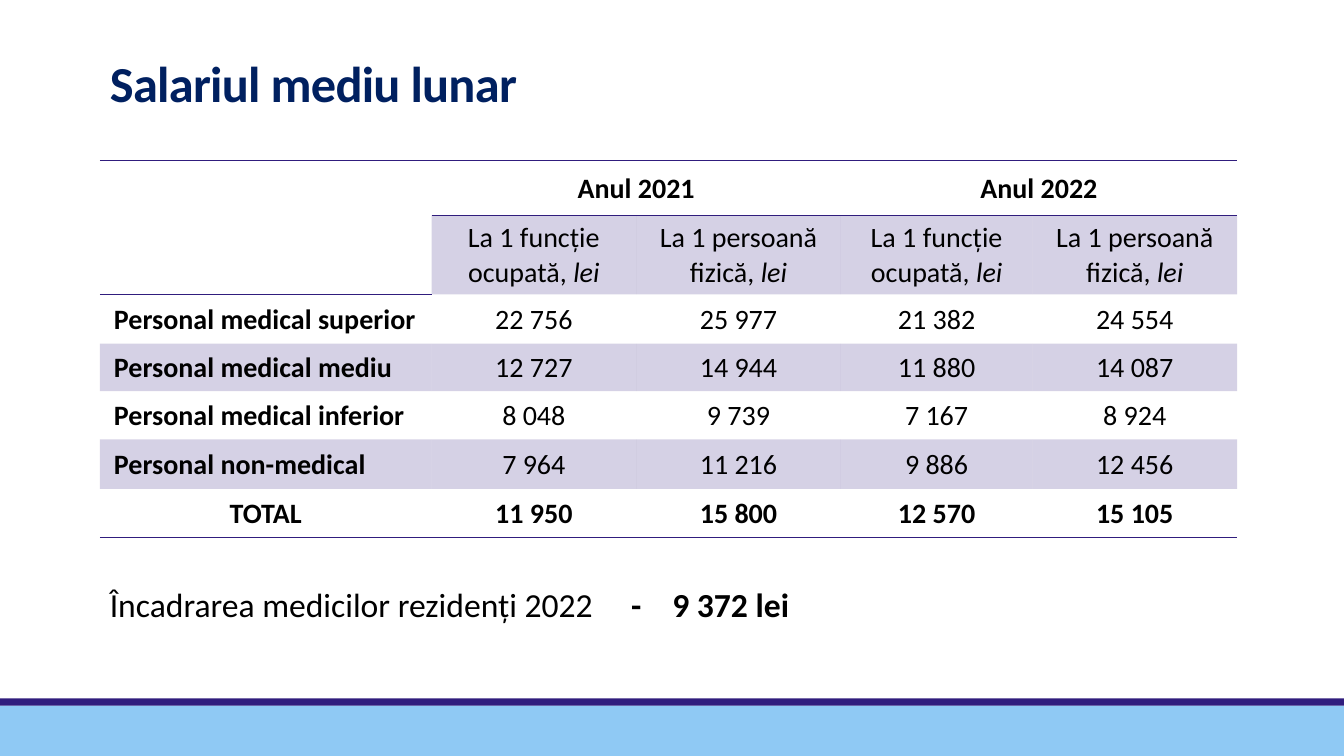
from lxml import etree
from pptx import Presentation
from pptx.dml.color import RGBColor
from pptx.enum import shapes, text
from pptx.oxml.ns import qn
from pptx.util import Inches, Pt

NAVY = RGBColor(0x00, 0x20, 0x60)
PURPLE = RGBColor(0x30, 0x1D, 0x7D)
SKY = RGBColor(0x8F, 0xC9, 0xF4)
BLACK = RGBColor(0, 0, 0)
PLAIN = "{2D5ABB26-0587-4C30-8999-92F81FD0307C}"


def style(run, size, color=BLACK, bold=False, italic=False):
    font = run.font
    font.name, font.size, font.bold, font.italic = "Calibri", Pt(size), bold, italic
    font.color.rgb = color


def rule(cell, *sides):
    props = cell._tc.get_or_add_tcPr()
    for side in sides:
        line = etree.SubElement(props, qn("a:ln" + side), w=str(Pt(1)))
        fill = etree.SubElement(line, qn("a:solidFill"))
        etree.SubElement(fill, qn("a:srgbClr"), val=str(PURPLE))


deck = Presentation()
deck.slide_width, deck.slide_height = Inches(13.33), Inches(7.5)
slide = deck.slides.add_slide(deck.slide_layouts[5])

# Bottom bands
for top, height, color in [(7, 0.5, SKY), (6.93, 0.07, PURPLE)]:
    band = slide.shapes.add_shape(
        shapes.MSO_SHAPE.RECTANGLE, 0, Inches(top), deck.slide_width, Inches(height))
    band.shadow.inherit = False
    band.fill.solid()
    band.fill.fore_color.rgb = color
    band.line.fill.background()

# Title
title = slide.shapes.title
title.left, title.top = Inches(0.99), Inches(0.29)
title.width, title.height = Inches(11.5), Inches(0.88)
title.text_frame.text = "Salariul mediu lunar"
title.text_frame.vertical_anchor = text.MSO_ANCHOR.BOTTOM
para = title.text_frame.paragraphs[0]
para.alignment = text.PP_ALIGN.LEFT
para.line_spacing = 0.85
style(para.runs[0], 36, NAVY, bold=True)
para.runs[0]._r.get_or_add_rPr().set("spc", "-50")

# Salary table
post, person = "La 1 funcție ocupată, ", "La 1 persoană fizică, "
rows = [
    ["", "Anul 2021", "", "Anul 2022", ""],
    ["", post, person, post, person],
    ["Personal medical superior", "22 756", "25 977", "21 382", "24 554"],
    ["Personal medical mediu", "12 727", "14 944", "11 880", "14 087"],
    ["Personal medical inferior", "8 048", "9 739", "7 167", "8 924"],
    ["Personal non-medical", "7 964", "11 216", "9 886", "12 456"],
    ["TOTAL", "11 950", "15 800", "12 570", "15 105"],
]
widths = [3.29, 2.03, 2.03, 1.9, 2.03]
heights = [0.55, 0.78, 0.49, 0.47, 0.48, 0.49, 0.48]
last = len(rows) - 1
table = slide.shapes.add_table(
    len(rows), len(widths), Inches(0.99), Inches(1.59),
    Inches(sum(widths)), Inches(sum(heights))).table
table.first_row = table.horz_banding = False
table._tbl.tblPr.find(qn("a:tableStyleId")).text = PLAIN
for col, width in zip(table.columns, widths):
    col.width = Inches(width)
for row, height in zip(table.rows, heights):
    row.height = Inches(height)

for r, row in enumerate(rows):
    for c, words in enumerate(row):
        cell = table.cell(r, c)
        label = c == 0 and r < last
        cell.vertical_anchor = text.MSO_ANCHOR.MIDDLE
        cell.margin_left = Inches(0.14 if label else 0.01)
        cell.margin_right = cell.margin_top = Inches(0.01)
        cell.margin_bottom = 0

        # Rules, then shaded bands
        if r == 0:
            rule(cell, "T", "B")
        elif r == last or (r, c) == (1, 0):
            rule(cell, "B")
        if r in (3, 5) or (r == 1 and c > 0):
            cell.fill.solid()
            cell.fill.fore_color.rgb = PURPLE
            tint = cell._tc.tcPr.find(".//" + qn("a:srgbClr"))
            etree.SubElement(tint, qn("a:alpha"), val="20000")
        else:
            cell.fill.background()

        # Cell text
        if words:
            para = cell.text_frame.paragraphs[0]
            para.text = words
            para.alignment = text.PP_ALIGN.LEFT if label else text.PP_ALIGN.CENTER
            style(para.runs[0], 20, bold=c == 0 or r in (0, last))
            if r == 1:
                unit = para.add_run()
                unit.text = "lei"
                style(unit, 20, italic=True)

table.cell(0, 0).merge(table.cell(1, 0))
for c in (1, 3):
    table.cell(0, c).merge(table.cell(0, c + 1))

# Note on residents, spaced with tab stops
note = slide.shapes.add_textbox(Inches(0.99), Inches(5.74), Inches(7.02), Inches(0.91))
note.text_frame.word_wrap = True
para = note.text_frame.paragraphs[0]
for words, bold in [("Încadrarea medicilor rezidenți 2022\t", False), ("-\t9 372 lei", True)]:
    run = para.add_run()
    run.text = words
    style(run, 24, bold=bold)
stops = etree.SubElement(para._p.get_or_add_pPr(), qn("a:tabLst"))
for stop in (5.17, 5.58):
    etree.SubElement(stops, qn("a:tab"), pos=str(Inches(stop)), algn="l")

deck.save("out.pptx")
